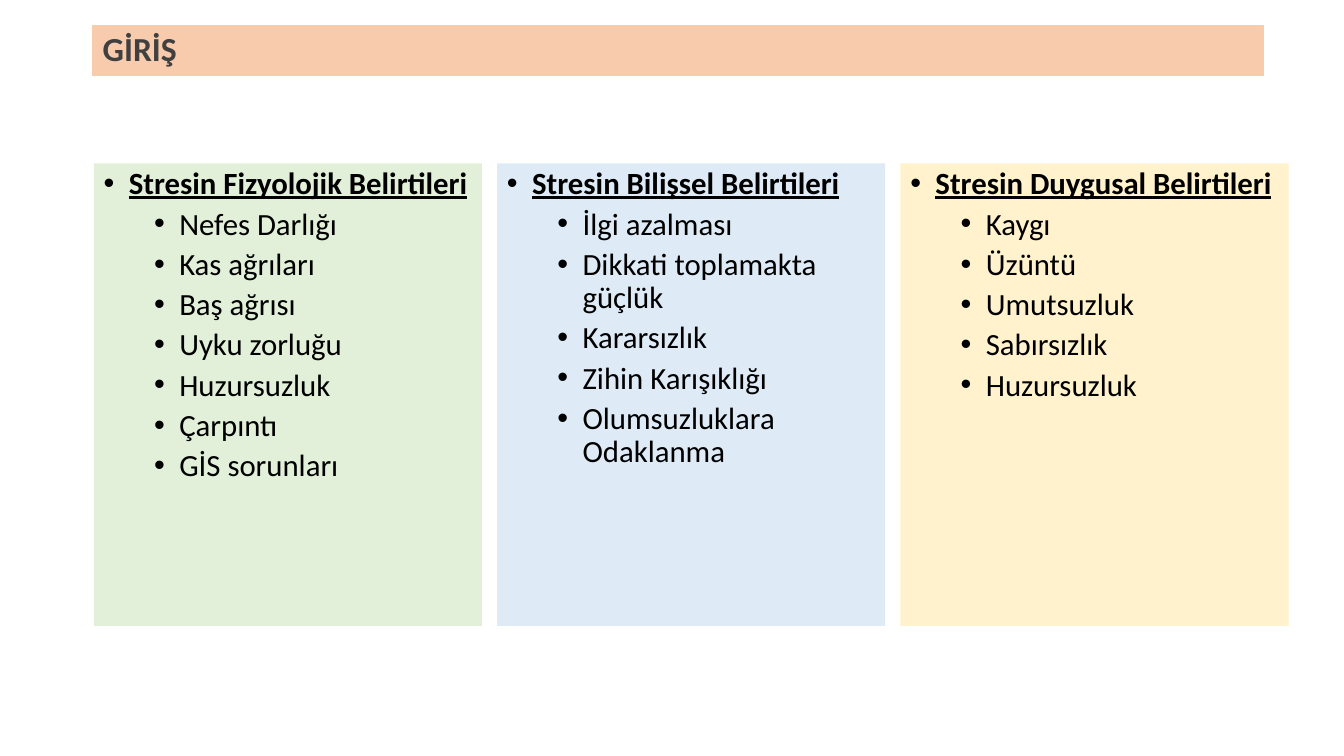
from dataclasses import dataclass

import pptx
import pptx.dml.color
import pptx.enum.shapes
import pptx.enum.text
import pptx.oxml
import pptx.oxml.ns
import pptx.util

PX = 9144  # EMU per px, 100 px to the inch


@dataclass(frozen=True)
class Theme:
    font: str = "Calibri"
    title_size: int = 24
    body_size: int = 22
    title_color: str = "404040"
    body_color: str = "000000"
    banner: str = "F8CBAD"
    green: str = "E2F0D9"
    blue: str = "DEEBF7"
    yellow: str = "FFF2CC"


THEME = Theme()

PANELS = [
    (THEME.green, "Stresin Fizyolojik Belirtileri",
     ["Nefes Darlığı", "Kas ağrıları", "Baş ağrısı", "Uyku zorluğu",
      "Huzursuzluk", "Çarpıntı", "GİS sorunları"]),
    (THEME.blue, "Stresin Bilişsel Belirtileri",
     ["İlgi azalması", "Dikkati toplamakta güçlük", "Kararsızlık",
      "Zihin Karışıklığı", "Olumsuzluklara Odaklanma"]),
    (THEME.yellow, "Stresin Duygusal Belirtileri",
     ["Kaygı", "Üzüntü", "Umutsuzluk", "Sabırsızlık", "Huzursuzluk"]),
]
PANEL_LEFT, PANEL_TOP, PANEL_WIDTH, PANEL_HEIGHT = 93, 162, 385, 459
PANEL_PITCH = 400


def rgb(color):
    return pptx.dml.color.RGBColor.from_string(color)


class SlideBuilder:
    def __init__(self, slide, theme):
        self.slide = slide
        self.theme = theme

    def rectangle(self, left, top, width, height, fill, line=None):
        box = self.slide.shapes.add_shape(
            pptx.enum.shapes.MSO_SHAPE.RECTANGLE,
            left * PX, top * PX, width * PX, height * PX)
        box.shadow.inherit = False
        box.fill.solid()
        box.fill.fore_color.rgb = rgb(fill)
        if line:
            box.line.color.rgb = rgb(line)
            box.line.width = pptx.util.Pt(1)
        else:
            box.line.fill.background()
        return box

    def run(self, para, text, size, color, bold=False, underline=False):
        para.alignment = pptx.enum.text.PP_ALIGN.LEFT
        para.line_spacing = 0.9
        span = para.add_run()
        span.text = text
        span.font.name = self.theme.font
        span.font.size = pptx.util.Pt(size)
        span.font.color.rgb = rgb(color)
        span.font.bold = bold
        span.font.underline = underline

    def bullet(self, para, text, level):
        """Fill a bulleted paragraph; level 0 is the underlined heading."""
        heading = level == 0
        para.level = level
        para.space_before = pptx.util.Pt(10 if heading else 5)
        self.run(para, text, self.theme.body_size, self.theme.body_color,
                 bold=heading, underline=heading)
        props = para._p.get_or_add_pPr()
        props.set("marL", str((25 + 50 * level) * PX))
        props.set("indent", str(-25 * PX))
        for tag, name, value in (("a:buFont", "typeface", "Arial"),
                                 ("a:buChar", "char", "•")):
            mark = pptx.oxml.parse_xml(
                f'<{tag} {pptx.oxml.ns.nsdecls("a")} {name}="{value}"/>')
            props.append(mark)

    def title(self, left, top, width, height, text):
        box = self.slide.shapes.add_textbox(
            left * PX, top * PX, width * PX, height * PX)
        frame = box.text_frame
        frame.word_wrap = True
        frame.vertical_anchor = pptx.enum.text.MSO_ANCHOR.MIDDLE
        self.run(frame.paragraphs[0], text, self.theme.title_size,
                 self.theme.title_color, bold=True)

    def panel(self, left, top, width, height, fill, heading, items):
        frame = self.rectangle(left, top, width, height, fill).text_frame
        frame.word_wrap = True
        frame.vertical_anchor = pptx.enum.text.MSO_ANCHOR.TOP
        self.bullet(frame.paragraphs[0], heading, 0)
        for item in items:
            self.bullet(frame.add_paragraph(), item, 1)


def main():
    deck = pptx.Presentation()
    deck.slide_width = pptx.util.Inches(13.33)
    deck.slide_height = pptx.util.Inches(7.5)
    builder = SlideBuilder(deck.slides.add_slide(deck.slide_layouts[6]), THEME)

    builder.rectangle(92, 26, 1161, 49, THEME.banner, line=THEME.banner)
    builder.title(92, 31, 1161, 38, "GİRİŞ")
    for column, (fill, heading, items) in enumerate(PANELS):
        builder.panel(PANEL_LEFT + column * PANEL_PITCH, PANEL_TOP,
                      PANEL_WIDTH, PANEL_HEIGHT, fill, heading, items)

    deck.save("out.pptx")


if __name__ == "__main__":
    main()
